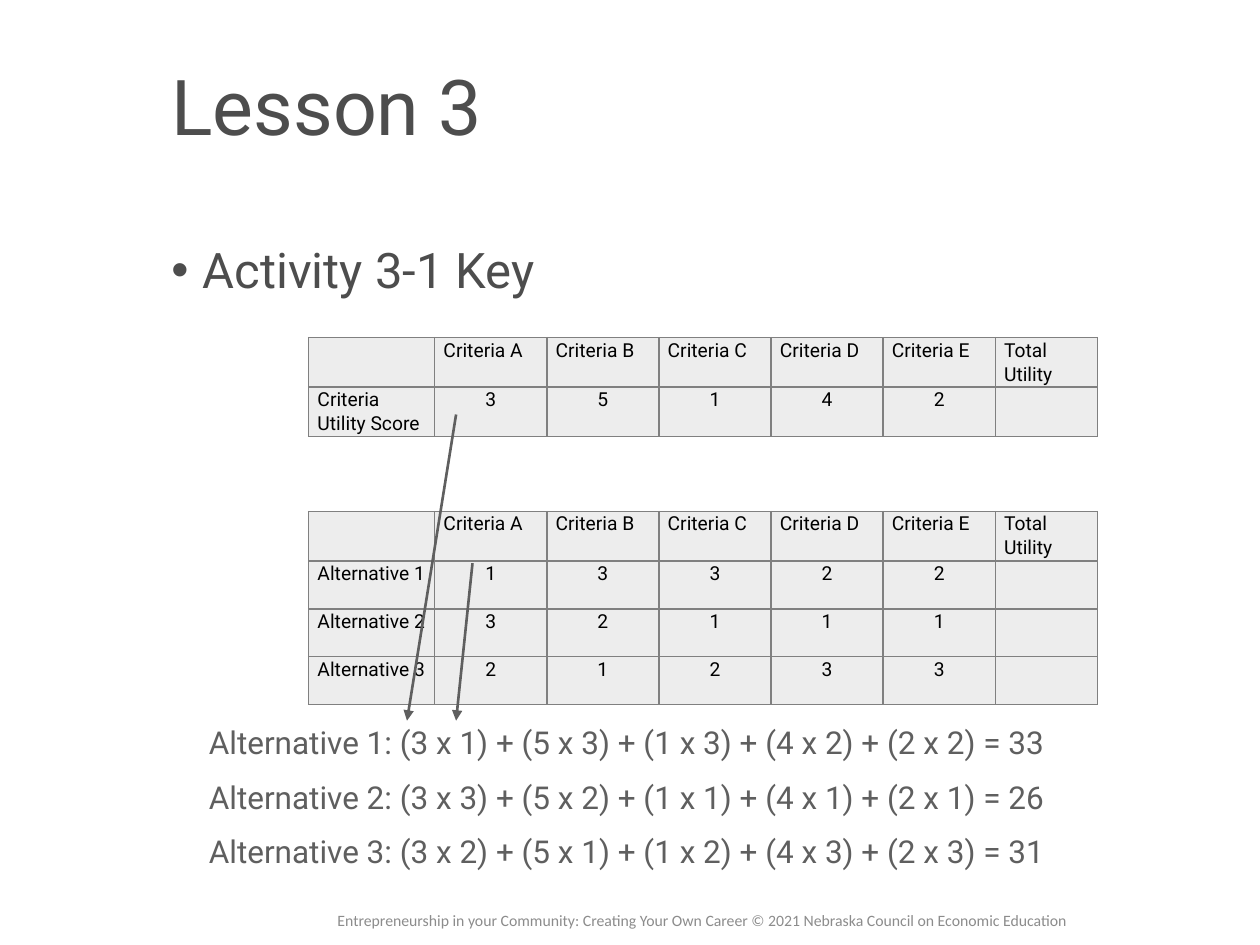
from lxml import etree
from pptx import Presentation, util as u
from pptx.dml.color import RGBColor
from pptx.enum import shapes, text
from pptx.oxml.ns import qn

# Content
TITLE = "Lesson 3"
TOPIC = "Activity 3-1 Key"
FOOT = ("Entrepreneurship in your Community: Creating Your Own Career "
        "© 2021 Nebraska Council on Economic Education")
HEAD = ["", *(f"Criteria {c}" for c in "ABCDE"), "Total Utility"]
WEIGHTS = [3, 5, 1, 4, 2]
SCORES = {
    "Alternative 1": [1, 3, 3, 2, 2],
    "Alternative 2": [3, 2, 1, 1, 1],
    "Alternative 3": [2, 1, 2, 3, 3],
}
ARROWS = [((3.62, 3.29), (3.23, 5.72)), ((3.75, 4.47), (3.62, 5.72))]

# Style and grid, in inches
COL = {"head": "4D4D4D", "sums": "5F5F5F", "foot": "8C8C8C",
       "cell": "EDEDED", "edge": "808080", "ink": "000000"}
LEFT, WIDE = 1.26, 8.62
COLS = [1] + [0.89] * 5 + [0.81]
ROW = 0.38
MID = text.PP_ALIGN.CENTER


def rgb(name):
    return RGBColor.from_string(COL[name])


def place(shape, *box):
    shape.left, shape.top, shape.width, shape.height = map(u.Inches, box)


def write(par, words, size, color, face="Roboto", align=None, space=1.0):
    par.alignment = align
    par.line_spacing = space
    par.space_before = u.Pt(0)
    run = par.add_run()
    run.text = words
    run.font.size = u.Pt(size)
    run.font.name = face
    run.font.color.rgb = rgb(color)


def add_box(slide, *box):
    shape = slide.shapes.add_textbox(*map(u.Inches, box))
    shape.text_frame.word_wrap = True
    return shape.text_frame


def edge(cell):
    props = cell._tc.get_or_add_tcPr()
    for side in ("lnL", "lnR", "lnT", "lnB"):
        line = etree.SubElement(props, qn(f"a:{side}"), w=str(u.Pt(1)))
        fill = etree.SubElement(line, qn("a:solidFill"))
        etree.SubElement(fill, qn("a:srgbClr"), val=COL["edge"])


def add_grid(slide, top, rows):
    size = (sum(COLS), ROW * len(rows))
    grid = slide.shapes.add_table(
        len(rows), len(COLS), *map(u.Inches, (2.45, top, *size))).table
    grid.first_row = grid.horz_banding = False
    for col, wide in zip(grid.columns, COLS):
        col.width = u.Inches(wide)
    for r, row in enumerate(rows):
        grid.rows[r].height = u.Inches(ROW)
        for c, value in enumerate(row):
            cell = grid.cell(r, c)
            cell.margin_left = cell.margin_right = u.Inches(0.07)
            cell.margin_top = cell.margin_bottom = 0
            edge(cell)
            cell.fill.solid()
            cell.fill.fore_color.rgb = rgb("cell")
            if value != "":
                align = MID if isinstance(value, int) else None
                write(cell.text_frame.paragraphs[0], str(value), 11, "ink",
                      align=align, space=1.07)


def add_arrow(slide, start, end):
    line = slide.shapes.add_connector(
        shapes.MSO_CONNECTOR.STRAIGHT, *map(u.Inches, start + end))
    line.line.width = u.Pt(1.5)
    line.line.color.rgb = rgb("sums")
    etree.SubElement(line.line._get_or_add_ln(), qn("a:tailEnd"),
                     type="triangle")
    etree.SubElement(line._element.spPr, qn("a:effectLst"))


def sum_up(name, marks):
    pairs = list(zip(WEIGHTS, marks))
    terms = " + ".join(f"({w} x {m})" for w, m in pairs)
    return f"{name}: {terms} = {sum(w * m for w, m in pairs)}"


def main():
    deck = Presentation()
    deck.slide_width, deck.slide_height = u.Inches(10), u.Inches(7.5)
    slide = deck.slides.add_slide(deck.slide_layouts[1])

    # Title and topic
    title, body = slide.shapes.title, slide.placeholders[1]
    place(title, LEFT, 0.15, WIDE, 1.45)
    place(body, LEFT, 1.9, WIDE, 4.76)
    for shape in (title, body):
        shape.text_frame.auto_size = text.MSO_AUTO_SIZE.NONE
    title.text_frame.vertical_anchor = text.MSO_ANCHOR.MIDDLE
    write(title.text_frame.paragraphs[0], TITLE, 44, "head",
          align=text.PP_ALIGN.LEFT, space=0.9)
    par = body.text_frame.paragraphs[0]
    props = par._p.get_or_add_pPr()
    props.set("marL", str(u.Inches(0.25)))
    props.set("indent", str(u.Inches(-0.25)))
    etree.SubElement(props, qn("a:buFont"), typeface="Arial")
    etree.SubElement(props, qn("a:buChar"), char="•")
    write(par, TOPIC, 28, "head", space=0.9)

    # Footer
    foot = add_box(slide, LEFT, 7.1, WIDE, 0.4)
    foot.vertical_anchor = text.MSO_ANCHOR.MIDDLE
    write(foot.paragraphs[0], FOOT, 9, "foot", face="Calibri", align=MID)

    # Weights and scores
    add_grid(slide, 2.68, [HEAD, ["Criteria Utility Score", *WEIGHTS, ""]])
    add_grid(slide, 4.06,
             [HEAD] + [[name, *marks, ""] for name, marks in SCORES.items()])
    for start, end in ARROWS:
        add_arrow(slide, start, end)

    # Worked sums
    sums = add_box(slide, 1.56, 5.67, 8.03, 1.28)
    for i, (name, marks) in enumerate(SCORES.items()):
        par = sums.add_paragraph() if i else sums.paragraphs[0]
        write(par, sum_up(name, marks), 18, "sums", space=1.07)
        par.space_after = u.Pt(8)

    deck.save("out.pptx")


if __name__ == "__main__":
    main()
